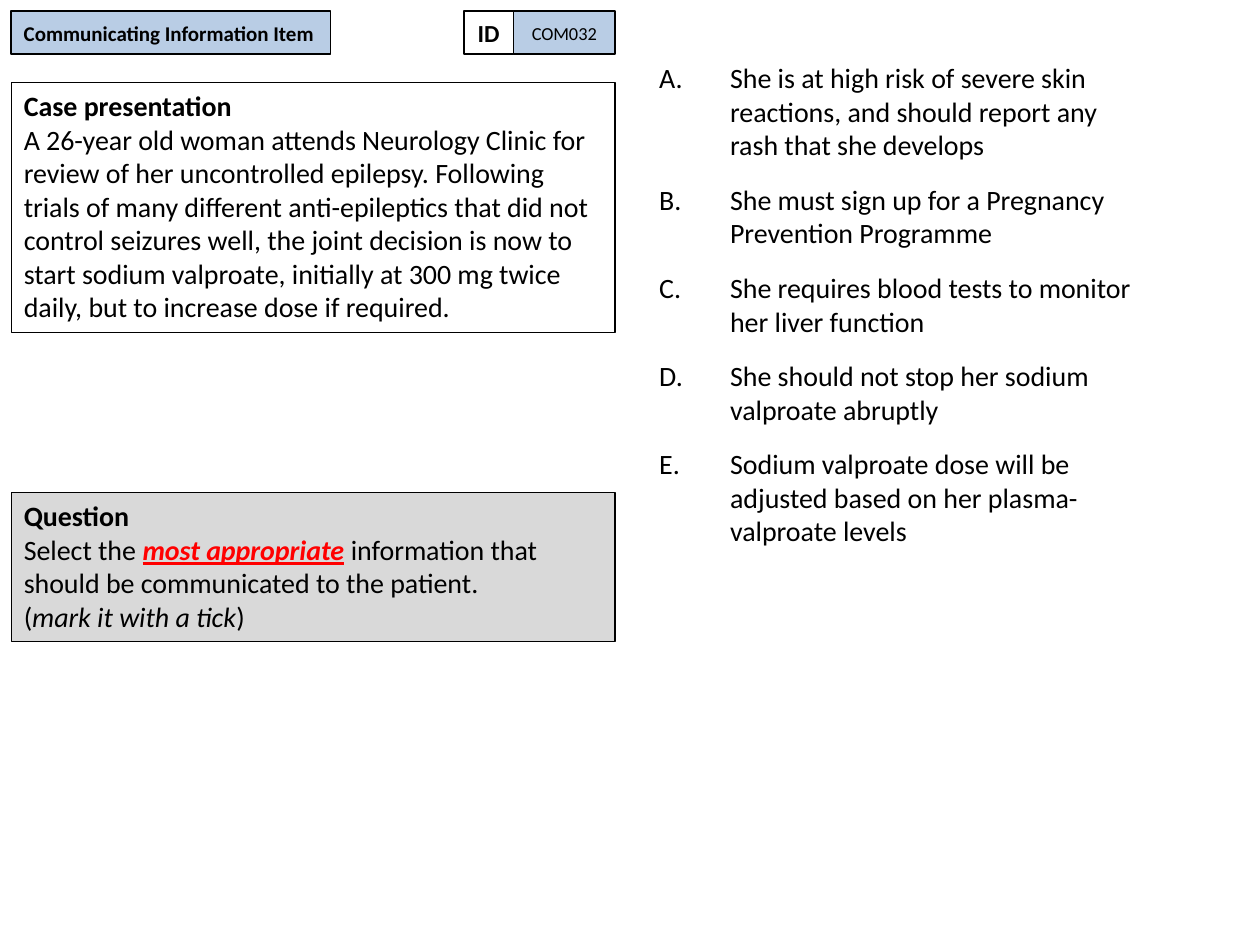
from lxml import etree
from pptx import Presentation
from pptx.dml.color import RGBColor
from pptx.enum.shapes import MSO_SHAPE
from pptx.enum.text import MSO_ANCHOR, MSO_AUTO_SIZE, PP_ALIGN
from pptx.oxml.ns import qn
from pptx.util import Pt

RECTANGLE = MSO_SHAPE.RECTANGLE
TOP, MIDDLE = MSO_ANCHOR.TOP, MSO_ANCHOR.MIDDLE
LEFT, CENTER = PP_ALIGN.LEFT, PP_ALIGN.CENTER
NO_AUTOFIT = MSO_AUTO_SIZE.NONE

BLACK = RGBColor(0x00, 0x00, 0x00)
RED = RGBColor(0xFF, 0x00, 0x00)
BLUE = RGBColor(0xB9, 0xCD, 0xE5)
GREY = RGBColor(0xD9, 0xD9, 0xD9)
FONT = "Calibri"

MARGIN = 6.5
COLUMN_WIDTH = 345
BODY_SIZE = 16
INDENT = 40.5

CASE = [
    [("Case presentation", {"bold": True})],
    [("A 26-year old woman attends Neurology Clinic for review of her uncontrolled "
      "epilepsy. Following trials of many different anti-epileptics that did not "
      "control seizures well, the joint decision is now to start sodium valproate, "
      "initially at 300 mg twice daily, but to increase dose if required.", {})],
]
QUESTION = [
    [("Question", {"bold": True})],
    [("Select the ", {}),
     ("most appropriate", {"bold": True, "italic": True, "underline": True, "color": RED}),
     (" information that should be communicated to the patient.", {})],
    [("(", {}), ("mark it with a tick", {"italic": True}), (")", {})],
]
OPTIONS = [
    "She is at high risk of severe skin reactions, and should report any rash that she develops",
    "She must sign up for a Pregnancy Prevention Programme",
    "She requires blood tests to monitor her liver function",
    "She should not stop her sodium valproate abruptly",
    "Sodium valproate dose will be adjusted based on her plasma-valproate levels",
]


def add_span(para, text, size, bold=False, italic=False, underline=None, color=BLACK):
    """Append one formatted run to a paragraph."""
    span = para.add_run()
    span.text = text
    font = span.font
    font.name, font.size = FONT, Pt(size)
    font.bold, font.italic, font.underline = bold, italic, underline
    font.color.rgb = color


def add_panel(page, box, paragraphs, size=BODY_SIZE, fill=None, line=0.75,
              anchor=TOP, align=LEFT):
    """Add an outlined rectangle holding paragraphs of formatted runs."""
    panel = page.shapes.add_shape(RECTANGLE, *map(Pt, box))
    panel.shadow.inherit = False
    if fill is None:
        panel.fill.background()
    else:
        panel.fill.solid()
        panel.fill.fore_color.rgb = fill
    panel.line.color.rgb = BLACK
    panel.line.width = Pt(line)
    frame = panel.text_frame
    frame.word_wrap = True
    frame.vertical_anchor = anchor
    for index, spans in enumerate(paragraphs):
        para = frame.add_paragraph() if index else frame.paragraphs[0]
        para.alignment = align
        for text, style in spans:
            add_span(para, text, size, **style)


def add_header(page, box):
    """Place the item type at the left and the ID pair at the right of the box."""
    left, top, width, height = box
    type_width, label_width, code_width = 182.5, 28.5, 58
    code_left = left + width - code_width
    labels = [
        (left, type_width, "Communicating Information Item", 12, True, BLUE, LEFT),
        (code_left, code_width, "COM032", 10.5, False, BLUE, CENTER),
        (code_left - label_width, label_width, "ID", 14, True, None, CENTER),
    ]
    for label_left, label_width, text, size, bold, fill, align in labels:
        add_panel(page, (label_left, top, label_width, height),
                  [[(text, {"bold": bold})]], size, fill, 1, MIDDLE, align)


def add_options(page, box):
    """Fill the body placeholder with the lettered answer options."""
    body = page.placeholders[1]
    body.left, body.top, body.width, body.height = map(Pt, box)
    frame = body.text_frame
    frame.auto_size = NO_AUTOFIT
    frame.word_wrap = True
    frame.vertical_anchor = TOP
    for index, option in enumerate(OPTIONS):
        para = frame.add_paragraph() if index else frame.paragraphs[0]
        para.space_before = Pt(12 if index else 0)
        properties = para._p.get_or_add_pPr()
        properties.set("marL", str(Pt(INDENT)))
        properties.set("indent", str(-Pt(INDENT)))
        bullet_font = etree.SubElement(properties, qn("a:buFont"))
        bullet_font.set("typeface", "+mj-lt")
        numbering = etree.SubElement(properties, qn("a:buAutoNum"))
        numbering.set("type", "alphaUcPeriod")
        add_span(para, option, BODY_SIZE)


def main():
    """Build the question page and save the deck."""
    deck = Presentation()
    deck.slide_width, deck.slide_height = Pt(720), Pt(540)
    page = deck.slides.add_slide(deck.slide_layouts[1])
    title = page.shapes.title.element
    title.getparent().remove(title)
    add_options(page, (369.5, 31, 291, 451.5))
    add_header(page, (MARGIN, MARGIN, COLUMN_WIDTH, 24.5))
    add_panel(page, (MARGIN, 47, COLUMN_WIDTH, 143), CASE)
    add_panel(page, (MARGIN, 281.5, COLUMN_WIDTH, 85), QUESTION, fill=GREY)
    deck.save("out.pptx")


if __name__ == "__main__":
    main()
